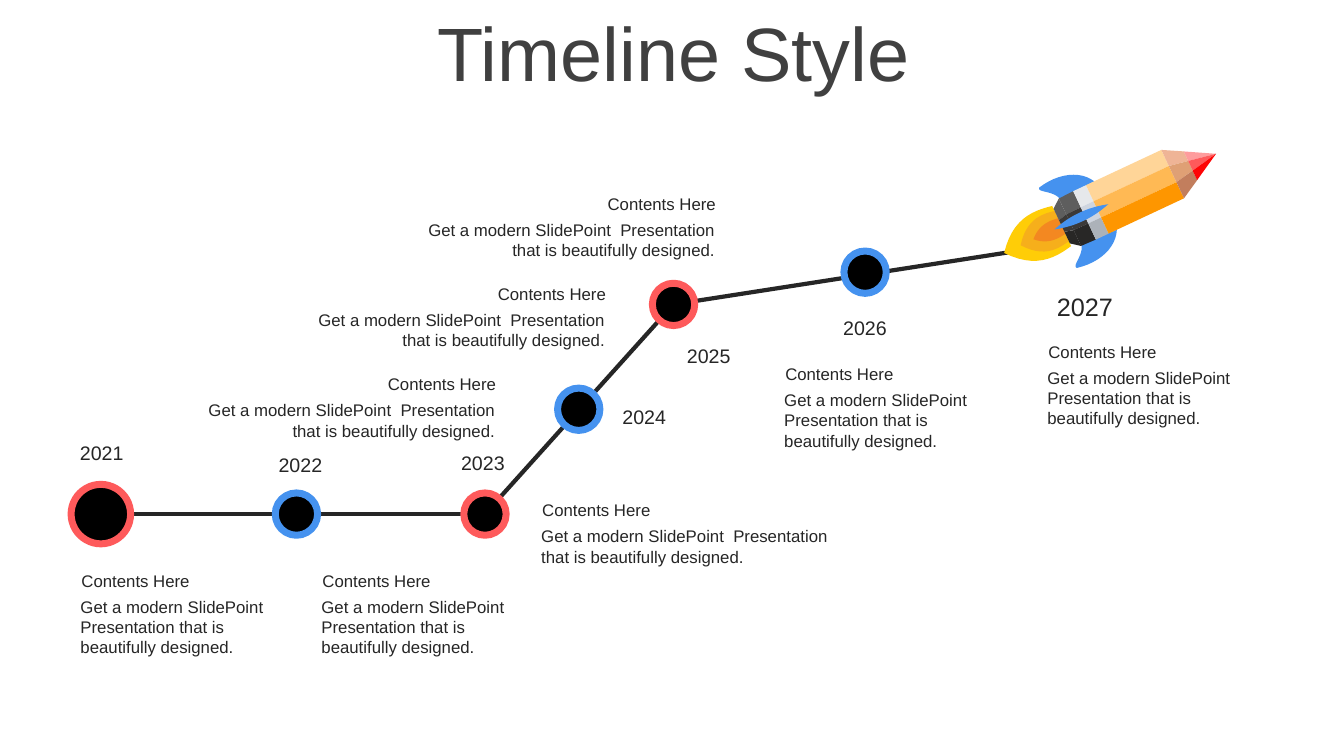
"""Build a timeline slide whose milestones climb towards a pencil rocket."""
import itertools
import math

import pptx
import pptx.dml.color
import pptx.enum.shapes
import pptx.enum.text
import pptx.oxml.ns
import pptx.util
from lxml import etree

SLIDE_WIDTH, SLIDE_HEIGHT = pptx.util.Inches(13.33), pptx.util.Inches(7.5)
ROWS = 75
CELL = SLIDE_HEIGHT / ROWS
CURVE_STEPS = 12

COLORS = {
    "title": "404040", "ink": "262626", "core": "000000",
    "red": "FE5A5B", "blue": "4592EF",
    "flame_outer": "FFCD07", "flame_middle": "F6AF1B", "flame_inner": "F38821",
    "tail_light": "5E5E5E", "tail_middle": "3B3938", "tail_dark": "282726",
    "band_light": "E6E8EB", "band_middle": "CFD5DF", "band_dark": "ACB2B9",
    "body_light": "FFD598", "body_middle": "FFB954", "body_dark": "FE9600",
    "wood_light": "EFB496", "wood_middle": "DFA075", "wood_dark": "C27E5D",
    "tip_light": "FE9C9D", "tip_middle": "FE5A5B", "tip_dark": "FD0506",
}
LEFT = pptx.enum.text.PP_ALIGN.LEFT
CENTER = pptx.enum.text.PP_ALIGN.CENTER
RIGHT = pptx.enum.text.PP_ALIGN.RIGHT

HEADING = "Contents Here"
DETAIL = "Get a modern SlidePoint  Presentation that is beautifully designed."
NARROW, WIDE = 21.6, 33.4
FIRST_YEAR = 2021

# centre column, centre row, diameter
MILESTONES = [
    (10, 51, 5.9), (29.4, 51, 4.2), (48.1, 51, 4.2),
    (57.4, 40.6, 4.2), (66.8, 30.2, 4.2), (85.8, 27, 4.2),
]
LAUNCH = (102.2, 24.7, 0)
# centre column, centre row
YEARS = [(10.1, 45), (29.8, 46.2), (47.9, 46), (63.9, 41.4),
         (70.3, 35.4), (85.8, 32.6), (107.6, 30.7)]
# left column, top row, width, alignment
NOTES = [
    (7.1, 56.1, NARROW, LEFT), (31, 56.1, NARROW, LEFT),
    (76.9, 35.6, NARROW, LEFT), (103, 33.4, NARROW, LEFT),
    (52.8, 49.1, WIDE, LEFT),
    *((16.8 + 10.9 * step, 36.6 - 8.95 * step, WIDE, RIGHT) for step in range(3)),
]
# the rocket is measured along its axis from the flame's end, and across it
FLAME_END = (99.6, 25.1)
CLIMB = math.radians(25.1)
FLAMES = [("flame_outer", 0, 2.2), ("flame_middle", 1.8, 1.65), ("flame_inner", 3.2, 0.85)]
# distance along the axis, half width, material up to the next station
HULL = [(6.3, 1.9, "tail"), (7.2, 2.6, "tail"), (8.8, 2.65, "band"), (10.2, 2.65, "body"),
        (18.45, 2.65, "wood"), (20.4, 1.57, "tip"), (23.2, 0, None)]


def cells(*counts):
    """Turn grid cells into lengths."""
    return [pptx.util.Emu(round(count * CELL)) for count in counts]


def rgb(name):
    """Look up a named colour."""
    return pptx.dml.color.RGBColor.from_string(COLORS[name])


def add_text(slide, box, words, size, align=LEFT, color="ink"):
    """Place one paragraph in a wrapping box and return its text frame."""
    frame = slide.shapes.add_textbox(*cells(*box)).text_frame
    frame.word_wrap = True
    paragraph = frame.paragraphs[0]
    paragraph.text = words
    paragraph.alignment = align
    paragraph.font.name = "Arial"
    paragraph.font.size = pptx.util.Pt(size)
    paragraph.font.color.rgb = rgb(color)
    return frame


def add_title(slide, words):
    """Place the slide title."""
    frame = add_text(slide, (3.5, 1.7, 126.6, 7.9), words, 54, CENTER, "title")
    frame.vertical_anchor = pptx.enum.text.MSO_ANCHOR.MIDDLE
    frame.paragraphs[0].line_spacing = 0.9
    frame.paragraphs[0].space_before = pptx.util.Pt(10)


def add_stretch(slide, start, end):
    """Draw the timeline between the rims of two milestones."""
    run, rise = end[0] - start[0], end[1] - start[1]
    length = math.hypot(run, rise)
    leave, arrive = start[2] / 2 / length, 1 - end[2] / 2 / length
    ends = [start[axis] + share * (run, rise)[axis]
            for share in (leave, arrive) for axis in (0, 1)]
    stretch = slide.shapes.add_connector(
        pptx.enum.shapes.MSO_CONNECTOR.STRAIGHT, *cells(*ends))
    stretch.line.color.rgb = rgb("ink")
    stretch.line.width = pptx.util.Pt(3)
    etree.SubElement(stretch._element.spPr, pptx.oxml.ns.qn("a:effectLst"))


def add_milestone(slide, column, row, diameter, ring_color):
    """Draw a ringed dot around its centre."""
    dot = slide.shapes.add_shape(
        pptx.enum.shapes.MSO_SHAPE.OVAL,
        *cells(column - diameter / 2, row - diameter / 2, diameter, diameter))
    dot.shadow.inherit = False
    dot.fill.solid()
    dot.fill.fore_color.rgb = rgb("core")
    dot.line.color.rgb = rgb(ring_color)
    dot.line.width = pptx.util.Pt(5)


def add_year(slide, year, column, row, size):
    """Place a year around its centre."""
    width, height = size / 2, size / 4
    add_text(slide, (column - width / 2, row - height / 2, width, height),
             str(year), size, CENTER)


def add_note(slide, column, row, width, align):
    """Place a heading with its detail below."""
    add_text(slide, (column - 0.1, row + 2.6, width, 5), DETAIL, 12, align)
    add_text(slide, (column, row, width, 3), HEADING, 12, align)


def curve(*knots):
    """List points on a cubic curve."""
    shares = [step / CURVE_STEPS for step in range(CURVE_STEPS + 1)]
    return [tuple(sum(math.comb(3, power) * t ** power * (1 - t) ** (3 - power) * knot[axis]
                      for power, knot in enumerate(knots)) for axis in (0, 1))
            for t in shares]


def mirror(points):
    """Reflect points in the rocket's axis."""
    return [(along, -across) for along, across in points]


def leaf(start, end, swell, end_half=0):
    """Outline a symmetric leaf along the rocket's axis."""
    length = end - start
    side = curve((start, 0), (start + length / 3, swell),
                 (end - length / 3, swell), (end, end_half))
    return side + mirror(side)[::-1]


def add_rocket_part(slide, color, outline):
    """Draw one filled part of the rocket."""
    start, *rest = [
        cells(FLAME_END[0] + along * math.cos(CLIMB) + across * math.sin(CLIMB),
              FLAME_END[1] - along * math.sin(CLIMB) + across * math.cos(CLIMB))
        for along, across in outline]
    builder = slide.shapes.build_freeform(*start)
    builder.add_line_segments(rest)
    part = builder.convert_to_shape()
    part.shadow.inherit = False
    part.fill.solid()
    part.fill.fore_color.rgb = rgb(color)
    part.line.fill.background()


def add_rocket(slide):
    """Draw flames, fins and the three-striped hull."""
    for color, start, half in FLAMES:
        add_rocket_part(slide, color, leaf(start, HULL[0][0], half * 1.2, half))
    fin = (curve((11.1, 2.65), (10.3, 4.2), (8.2, 4.9), (5.9, 4.4))
           + curve((5.9, 4.4), (5.5, 4), (7, 3.6), (7.3, 2.5)))
    for outline in (fin, mirror(fin)):
        add_rocket_part(slide, "blue", outline)
    for (start, start_half, material), (end, end_half, _) in itertools.pairwise(HULL):
        for stripe, shade in enumerate(("light", "middle", "dark")):
            top, bottom = [2 * edge / 3 - 1 for edge in (stripe, stripe + 1)]
            add_rocket_part(slide, f"{material}_{shade}", [
                (start, top * start_half), (end, top * end_half),
                (end, bottom * end_half), (start, bottom * start_half)])
    add_rocket_part(slide, "blue", leaf(5.5, 11.4, 0.6))


def main():
    """Build and save the slide."""
    deck = pptx.Presentation()
    deck.slide_width, deck.slide_height = SLIDE_WIDTH, SLIDE_HEIGHT
    slide = deck.slides.add_slide(deck.slide_layouts[6])
    add_title(slide, "Timeline Style")
    for start, end in itertools.pairwise([*MILESTONES[::2], LAUNCH]):
        add_stretch(slide, start, end)
    for milestone, ring_color in zip(MILESTONES, itertools.cycle(("red", "blue"))):
        add_milestone(slide, *milestone, ring_color)
    for index, center in enumerate(YEARS):
        add_year(slide, FIRST_YEAR + index, *center, 14 if index < len(MILESTONES) else 18)
    for note in NOTES:
        add_note(slide, *note)
    add_rocket(slide)
    deck.save("out.pptx")


if __name__ == "__main__":
    main()
